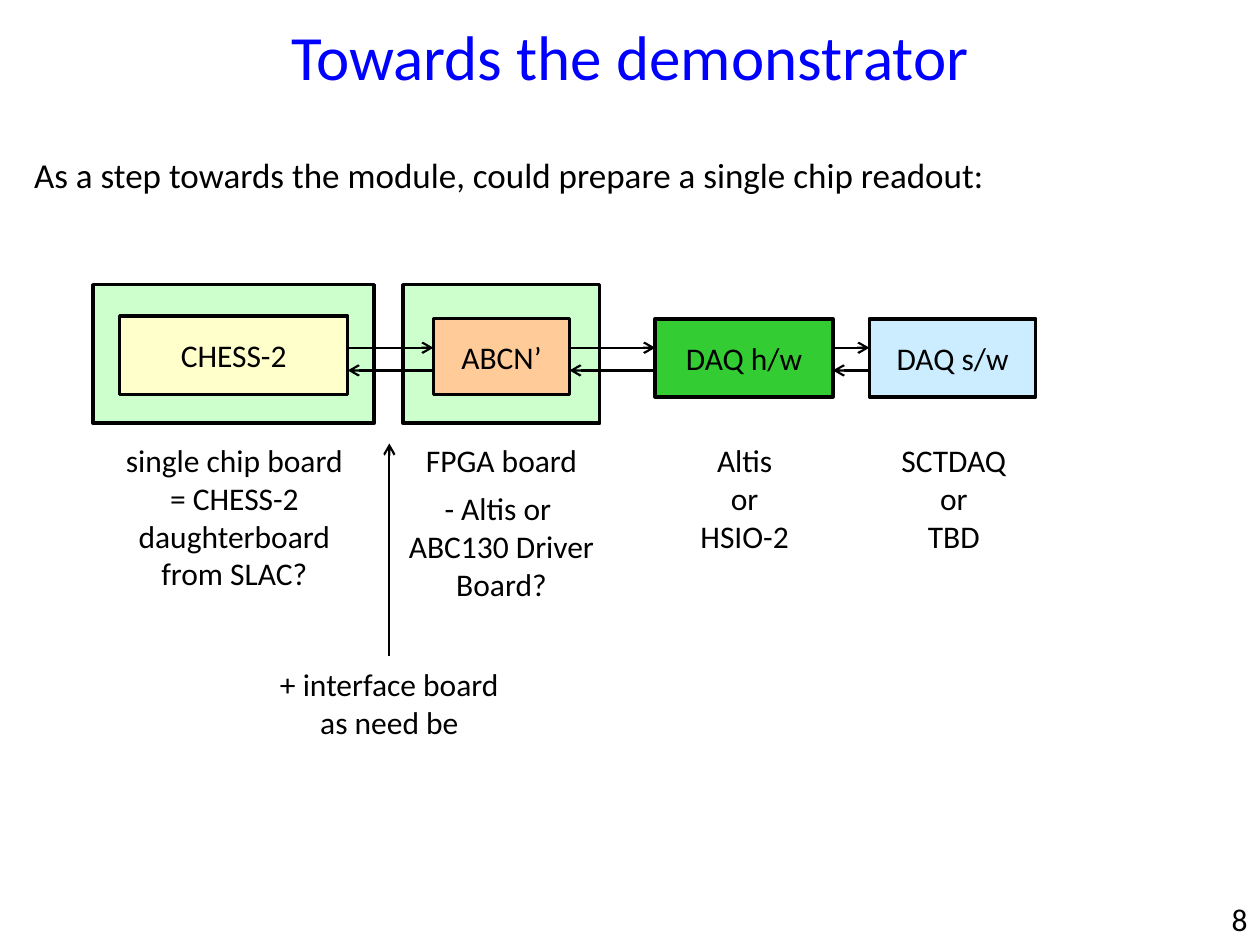
from dataclasses import dataclass

from pptx import Presentation
from pptx.dml.color import RGBColor
from pptx.enum.shapes import MSO_CONNECTOR as Connector, MSO_SHAPE as Shape
from pptx.enum.text import MSO_ANCHOR as Anchor, MSO_AUTO_SIZE as AutoSize, PP_ALIGN as Align
from pptx.oxml.ns import qn
from pptx.util import Inches, Pt
from lxml.etree import SubElement

COLORS = {
    "black": "000000", "title": "0000FF", "board": "CCFFCC", "sensor": "FFFFCC",
    "chip": "FFCC99", "hardware": "33CC33", "software": "CCECFF",
}
FONT = "Calibri"
SEND_Y, RETURN_Y = 2.76, 2.94
CAPTION_WIDTH = 1.98


@dataclass
class Block:
    left: float
    top: float
    width: float
    height: float
    color: str
    label: str = ""

    @property
    def right(self) -> float:
        return self.left + self.width


@dataclass
class Caption:
    left: float
    top: float
    height: float
    text: str


BOARDS = [
    Block(0.74, 2.26, 2.23, 1.1, "board"),
    Block(3.2, 2.26, 1.56, 1.1, "board"),
]
STAGES = [
    Block(0.95, 2.51, 1.81, 0.62, "sensor", "CHESS-2"),
    Block(3.44, 2.53, 1.08, 0.6, "chip", "ABCN’"),
    Block(5.2, 2.53, 1.41, 0.62, "hardware", "DAQ h/w"),
    Block(6.9, 2.53, 1.32, 0.62, "software", "DAQ s/w"),
]
# \v breaks a line, \n starts a paragraph
CAPTIONS = [
    Caption(0.87, 3.45, 1.31, "single chip board = CHESS-2 daughterboard\vfrom SLAC?"),
    Caption(2.99, 3.45, 1.4, "FPGA board\n- Altis or \vABC130 Driver Board?"),
    Caption(4.92, 3.45, 1.01, "Altis\vor\vHSIO-2"),
    Caption(6.58, 3.45, 1.01, "SCTDAQ\vor\vTBD"),
    Caption(2.1, 5.23, 0.71, "+ interface board as need be"),
]


def rgb(name: str) -> RGBColor:
    return RGBColor.from_string(COLORS[name])


def place(shape, left: float, top: float, width: float, height: float) -> None:
    shape.left, shape.top = Inches(left), Inches(top)
    shape.width, shape.height = Inches(width), Inches(height)


def write(shape, text: str, size: int = 18, color: str = "black",
          align=Align.CENTER, anchor=Anchor.TOP, after: int = 0) -> None:
    frame = shape.text_frame
    frame.text = text
    frame.word_wrap = True
    frame.auto_size = AutoSize.NONE
    frame.vertical_anchor = anchor
    for para in frame.paragraphs:
        para.alignment = align
        para.space_before, para.space_after = Pt(0), Pt(after)
        for span in para.runs:
            span.font.name, span.font.size = FONT, Pt(size)
            span.font.color.rgb = rgb(color)


def draw_block(page, block: Block) -> None:
    box = page.shapes.add_shape(Shape.RECTANGLE, 0, 0, 0, 0)
    place(box, block.left, block.top, block.width, block.height)
    box.shadow.inherit = False
    box.fill.solid()
    box.fill.fore_color.rgb = rgb(block.color)
    box.line.color.rgb = rgb("black")
    box.line.width = Pt(2)
    if block.label:
        write(box, block.label, anchor=Anchor.MIDDLE)


def draw_arrow(page, x1: float, y1: float, x2: float, y2: float) -> None:
    arrow = page.shapes.add_connector(
        Connector.STRAIGHT, Inches(x1), Inches(y1), Inches(x2), Inches(y2))
    arrow.line.color.rgb = rgb("black")
    arrow.line.width = Pt(1.25)
    SubElement(arrow.line._get_or_add_ln(), qn("a:tailEnd"), type="arrow")
    SubElement(arrow._element.spPr, qn("a:effectLst"))


def draw_caption(page, caption: Caption) -> None:
    box = page.shapes.add_textbox(0, 0, 0, 0)
    place(box, caption.left, caption.top, CAPTION_WIDTH, caption.height)
    write(box, caption.text, after=6)


def main() -> None:
    deck = Presentation()
    deck.slide_width, deck.slide_height = Inches(10), Inches(7.5)
    page = deck.slides.add_slide(deck.slide_layouts[1])

    # Title, introduction and page number
    title, intro = page.shapes.title, page.placeholders[1]
    place(title, 0.5, 0.13, 9, 0.62)
    write(title, "Towards the demonstrator", 36, "title", anchor=Anchor.MIDDLE)
    place(intro, 0.17, 1.17, 9.62, 0.44)
    write(intro, "As a step towards the module, could prepare a single chip readout:",
          20, align=Align.LEFT, after=6)
    props = intro.text_frame.paragraphs[0]._p.get_or_add_pPr()
    props.set("marL", "0")
    props.set("indent", "0")
    SubElement(props, qn("a:buNone"))
    number = page.shapes.add_textbox(0, 0, 0, 0)
    place(number, 9.25, 7.09, 0.75, 0.4)
    write(number, "8", align=Align.RIGHT, anchor=Anchor.MIDDLE)

    # Readout chain, with a pair of arrows between neighbours
    for block in BOARDS + STAGES:
        draw_block(page, block)
    for stage, following in zip(STAGES, STAGES[1:]):
        draw_arrow(page, stage.right, SEND_Y, following.left, SEND_Y)
        draw_arrow(page, following.left, RETURN_Y, stage.right, RETURN_Y)

    # Captions, and the pointer to the gap between the boards
    for caption in CAPTIONS:
        draw_caption(page, caption)
    draw_arrow(page, 3.09, 5.21, 3.09, 3.52)

    deck.save("out.pptx")


if __name__ == "__main__":
    main()
